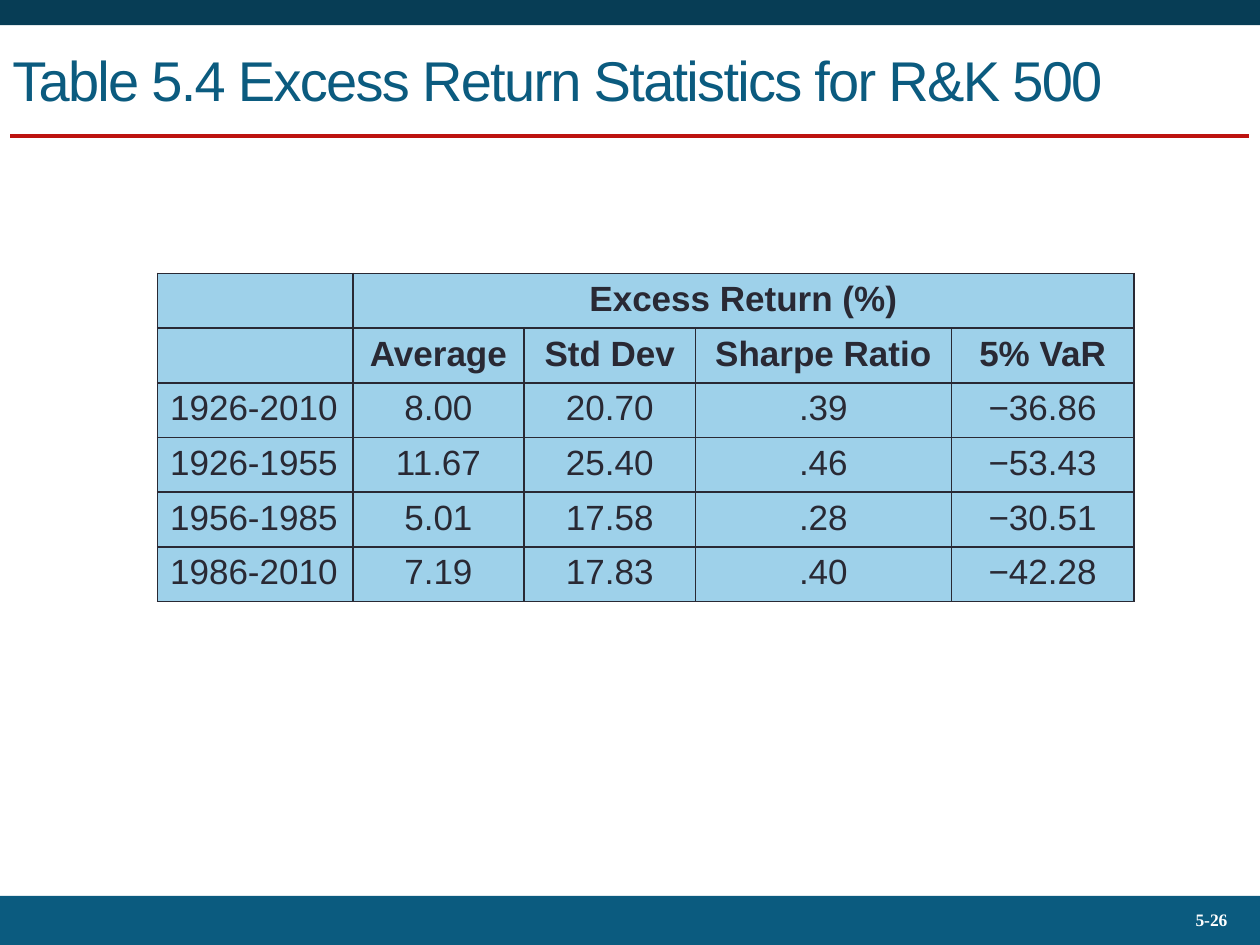
import dataclasses

import pptx
import pptx.dml.color
import pptx.enum.shapes
import pptx.enum.text
import pptx.oxml
import pptx.oxml.ns
import pptx.util

Inches = pptx.util.Inches
Pt = pptx.util.Pt
ALIGN = pptx.enum.text.PP_ALIGN


@dataclasses.dataclass(frozen=True)
class Theme:
    dark: str = "073D55"
    blue: str = "0B5B7F"
    red: str = "BD130F"
    pale: str = "9ED1EA"
    ink: str = "292934"
    white: str = "FFFFFF"
    sans: str = "Arial"
    serif: str = "Times New Roman"
    title: int = 32
    cell: int = 20
    page: int = 10


THEME = Theme()

WIDTHS = [1.55, 1.36, 1.36, 2.03, 1.45]
ROW = 0.41
ROWS = [
    ["", "Excess Return (%)", "", "", ""],
    ["", "Average", "Std Dev", "Sharpe Ratio", "5% VaR"],
    ["1926-2010", "8.00", "20.70", ".39", "−36.86"],
    ["1926-1955", "11.67", "25.40", ".46", "−53.43"],
    ["1956-1985", "5.01", "17.58", ".28", "−30.51"],
    ["1986-2010", "7.19", "17.83", ".40", "−42.28"],
]
HEADS = 2


def rgb(code):
    return pptx.dml.color.RGBColor.from_string(code)


def style(para, size, color, face, bold=False, align=ALIGN.LEFT):
    para.alignment = align
    for run in para.runs:
        font = run.font
        font.size, font.name, font.bold = Pt(size), face, bold
        font.color.rgb = rgb(color)


def add_band(slide, top, height, color):
    band = slide.shapes.add_shape(
        pptx.enum.shapes.MSO_SHAPE.RECTANGLE,
        0, Inches(top), Inches(10), Inches(height))
    band.shadow.inherit = False
    band.fill.solid()
    band.fill.fore_color.rgb = rgb(color)
    band.line.fill.background()


def add_rule(slide, left, right, y):
    rule = slide.shapes.add_connector(
        pptx.enum.shapes.MSO_CONNECTOR.STRAIGHT,
        Inches(left), Inches(y), Inches(right), Inches(y))
    rule.line.color.rgb = rgb(THEME.red)
    rule.line.width = Pt(2.25)
    rule._element.spPr.append(pptx.oxml.parse_xml(
        f"<a:effectLst {pptx.oxml.ns.nsdecls('a')}/>"))


def add_text(slide, text, left, top, width, height):
    """Add a middle-anchored text box and return its paragraph."""
    box = slide.shapes.add_textbox(
        Inches(left), Inches(top), Inches(width), Inches(height))
    frame = box.text_frame
    frame.word_wrap = True
    frame.vertical_anchor = pptx.enum.text.MSO_ANCHOR.MIDDLE
    frame.text = text
    return frame.paragraphs[0]


def add_title(slide, text):
    para = add_text(slide, text, 0, 0.17, 10, 0.91)
    style(para, THEME.title, THEME.blue, THEME.sans)
    for run in para.runs:
        run.font._element.set("spc", "-100")


def add_page(slide, text):
    para = add_text(slide, text, 8.67, 7.13, 1.17, 0.36)
    para.line_spacing = 0.93
    style(para, THEME.page, THEME.white, THEME.serif, True, ALIGN.RIGHT)


def set_edges(cell):
    props = cell._tc.get_or_add_tcPr()
    for side in "LRTB":
        props.append(pptx.oxml.parse_xml(
            f'<a:ln{side} {pptx.oxml.ns.nsdecls("a")} w="{Pt(1)}">'
            f'<a:solidFill><a:srgbClr val="{THEME.ink}"/></a:solidFill>'
            f'</a:ln{side}>'))


def add_grid(slide, left, top):
    table = slide.shapes.add_table(
        len(ROWS), len(WIDTHS), Inches(left), Inches(top),
        Inches(sum(WIDTHS)), Inches(ROW * len(ROWS))).table
    table.first_row = table.horz_banding = False
    for col, width in zip(table.columns, WIDTHS):
        col.width = Inches(width)
    for r, row in enumerate(ROWS):
        table.rows[r].height = Inches(ROW)
        for c, text in enumerate(row):
            cell = table.cell(r, c)
            cell.text = text
            set_edges(cell)
            cell.fill.solid()
            cell.fill.fore_color.rgb = rgb(THEME.pale)
            style(cell.text_frame.paragraphs[0], THEME.cell, THEME.ink,
                  THEME.sans, r < HEADS, ALIGN.CENTER if c else ALIGN.LEFT)
    table.cell(0, 1).merge(table.cell(0, len(WIDTHS) - 1))


def main():
    deck = pptx.Presentation()
    deck.slide_width, deck.slide_height = Inches(10), Inches(7.5)
    slide = deck.slides.add_slide(deck.slide_layouts[6])
    add_band(slide, 0, 0.2, THEME.dark)
    add_rule(slide, 0.08, 9.91, 1.08)
    add_band(slide, 7.11, 0.4, THEME.blue)
    add_page(slide, "5-26")
    add_title(slide, "Table 5.4 Excess Return Statistics for R&K 500")
    add_grid(slide, 1.25, 2.17)
    deck.save("out.pptx")


if __name__ == "__main__":
    main()
